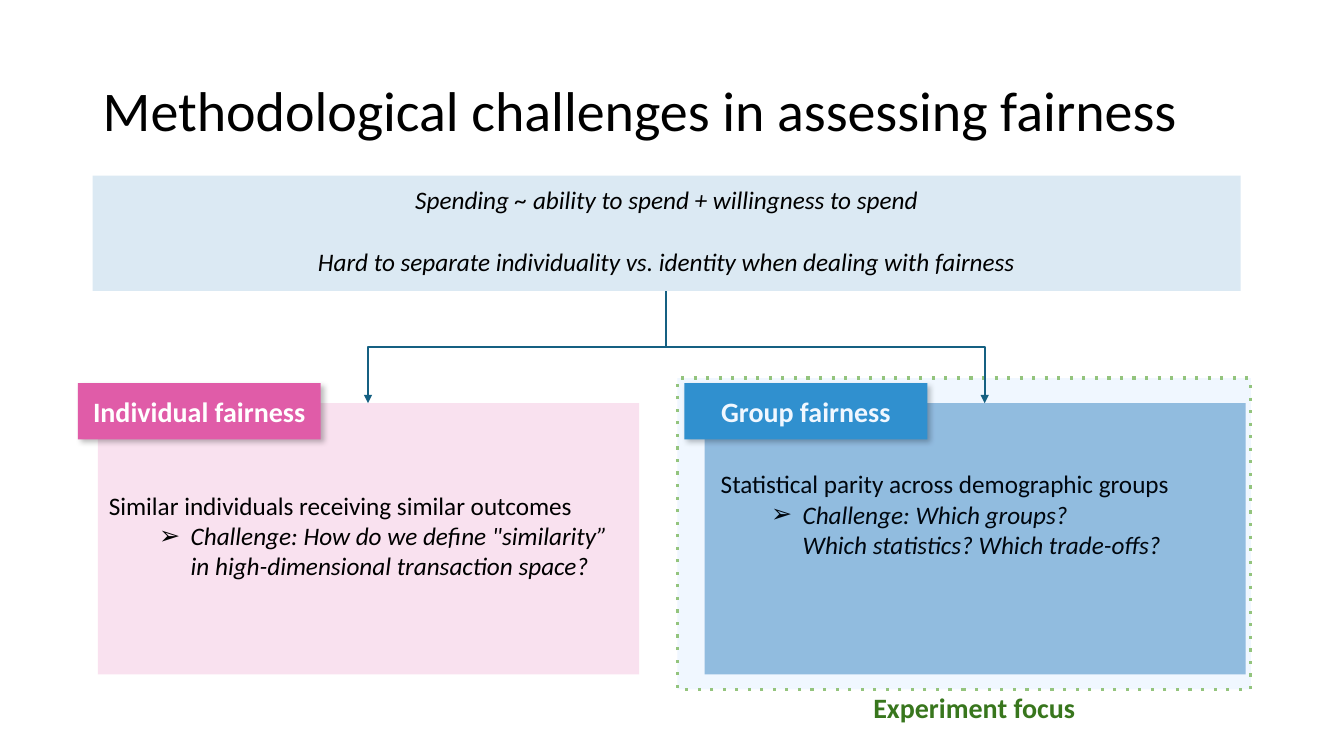
from lxml import etree
from pptx import Presentation
from pptx.dml.color import RGBColor
from pptx.enum.shapes import MSO_CONNECTOR, MSO_SHAPE
from pptx.enum.text import MSO_ANCHOR, MSO_AUTO_SIZE, PP_ALIGN
from pptx.oxml.ns import qn
from pptx.util import Pt

RECT, ELBOW = MSO_SHAPE.RECTANGLE, MSO_CONNECTOR.ELBOW
TOP, MIDDLE = MSO_ANCHOR.TOP, MSO_ANCHOR.MIDDLE
LEFT, CENTER = PP_ALIGN.LEFT, PP_ALIGN.CENTER
NO_FIT = MSO_AUTO_SIZE.NONE
TWO_CONTENT = 3

COLORS = {
    "black": "000000", "white": "FFFFFF", "banner": "DBE9F3",
    "pink": "E05CA8", "blue": "3392CC", "light_blue": "9BC0DE",
    "focus": "007DFF", "dots": "93C47D", "green": "38761D", "arrow": "156082",
}


def color(name):
    return RGBColor.from_string(COLORS[name])


def add_xml(parent, tag, **attrs):
    child = etree.SubElement(parent, qn(tag))
    for key, value in attrs.items():
        child.set(key, str(value))
    return child


class FairnessSlide:
    font = "Calibri"

    def __init__(self, prs):
        self.s = prs.slides.add_slide(prs.slide_layouts[TWO_CONTENT])
        self.shapes = self.s.shapes

    def place(self, sp, box):
        sp.left, sp.top, sp.width, sp.height = (Pt(v) for v in box)

    def frame(self, sp, anchor, inset_x=7.2, inset_y=3.6):
        tf = sp.text_frame
        tf.word_wrap = True
        tf.auto_size = NO_FIT
        tf.vertical_anchor = anchor
        tf.margin_left = tf.margin_right = Pt(inset_x)
        tf.margin_top = tf.margin_bottom = Pt(inset_y)
        return tf

    def add_lines(self, p, lines, size, ink="black", align=LEFT, before=0, bold=False, italic=False):
        """Add one run per line, with a line break between the runs."""
        p.alignment = align
        p.space_before = Pt(before)
        for i, line in enumerate(lines):
            if i:
                p.add_line_break()
                add_xml(p._p.findall(qn("a:br"))[-1], "a:rPr", sz=size * 100)
            r = p.add_run()
            r.text = line
            r.font.name, r.font.size = self.font, Pt(size)
            r.font.bold, r.font.italic = bold, italic
            r.font.color.rgb = color(ink)

    def title(self, text, box):
        sp = self.shapes.title
        self.place(sp, box)
        p = self.frame(sp, MIDDLE).paragraphs[0]
        p.line_spacing = 0.9
        self.add_lines(p, [text], 40)

    def rect(self, box, fill, alpha=None):
        sp = self.shapes.add_shape(RECT, *(Pt(v) for v in box))
        sp.shadow.inherit = False
        sp.fill.solid()
        sp.fill.fore_color.rgb = color(fill)
        sp.line.fill.background()
        if alpha:
            rgb = sp._element.spPr.find(qn("a:solidFill"))[0]
            add_xml(rgb, "a:alpha", val=alpha * 1000)
        return sp

    def banner(self, lines, box):
        tf = self.frame(self.rect(box, "banner"), TOP, inset_y=6.5)
        for i, line in enumerate(lines):
            p = tf.add_paragraph() if i else tf.paragraphs[0]
            self.add_lines(p, [line], 18, align=CENTER, before=22 * i, italic=True)

    def tag(self, text, box, fill):
        sp = self.rect(box, fill)
        effects = sp._element.spPr.find(qn("a:effectLst"))
        shadow = add_xml(effects, "a:outerShdw", blurRad=Pt(4), dist=Pt(3), dir=45 * 60000)
        rgb = add_xml(shadow, "a:srgbClr", val=COLORS["black"])
        add_xml(rgb, "a:alpha", val=25000)
        p = self.frame(sp, MIDDLE).paragraphs[0]
        self.add_lines(p, [text], 20, "white", CENTER, bold=True)

    def definition(self, idx, box, statement, challenge):
        """Fill a body placeholder with a statement and its bulleted challenge."""
        sp = self.s.placeholders[idx]
        self.place(sp, box)
        self.shapes._spTree.append(sp._element)
        tf = self.frame(sp, TOP, 11.5, 8.6)
        p = tf.paragraphs[0]
        pPr = p._p.get_or_add_pPr()
        pPr.set("marL", "0")
        pPr.set("indent", "0")
        add_xml(pPr, "a:buNone")
        self.add_lines(p, [statement], 18)
        p = tf.add_paragraph()
        p.level = 1
        pPr = p._p.get_or_add_pPr()
        pPr.set("marL", str(Pt(58.5)))
        pPr.set("indent", str(Pt(-22.5)))
        add_xml(add_xml(pPr, "a:buClr"), "a:srgbClr", val=COLORS["black"])
        add_xml(pPr, "a:buFont", typeface="Arial")
        add_xml(pPr, "a:buChar", char="➢")
        self.add_lines(p, challenge, 18, italic=True)

    def focus_frame(self, box):
        sp = self.rect(box, "focus", alpha=6)
        sp.line.color.rgb = color("dots")
        sp.line.width = Pt(2.25)
        add_xml(sp._element.spPr.find(qn("a:ln")), "a:prstDash", val="dot")

    def caption(self, text, box):
        sp = self.shapes.add_textbox(*(Pt(v) for v in box))
        p = self.frame(sp, TOP, 9.4, 9.4).paragraphs[0]
        self.add_lines(p, [text], 20, "green", CENTER, bold=True)

    def branch(self, x1, y1, x2, y2):
        """Elbow arrow that leaves and arrives vertically: a turned elbow connector."""
        mid_x, mid_y = (x1 + x2) / 2, (y1 + y2) / 2
        half_w, half_h = (y2 - y1) / 2, abs(x2 - x1) / 2
        to_right = x2 > x1
        side = 1 if to_right else -1
        cx = self.shapes.add_connector(
            ELBOW, Pt(mid_x + side * half_w), Pt(mid_y - half_h),
            Pt(mid_x - side * half_w), Pt(mid_y + half_h))
        spPr = cx._element.spPr
        spPr.find(qn("a:xfrm")).set("rot", str((270 if to_right else 90) * 60000))
        cx.line.color.rgb = color("arrow")
        cx.line.width = Pt(1.5)
        add_xml(spPr.find(qn("a:ln")), "a:tailEnd", type="triangle")
        add_xml(spPr, "a:effectLst")


def main():
    prs = Presentation()
    prs.slide_width, prs.slide_height = Pt(960), Pt(540)
    slide = FairnessSlide(prs)
    slide.title("Methodological challenges in assessing fairness", (66.2, 28.8, 846.7, 104.4))
    slide.banner(["Spending ~ ability to spend + willingness to spend",
                  "Hard to separate individuality vs. identity when dealing with fairness"],
                 (66.2, 125.5, 820, 82.3))
    panels = [
        (1, "Individual fairness", "pink", "pink", 18, 66.2, 341.4,
         "Similar individuals receiving similar outcomes",
         ["Challenge:\u00a0How do we define \"similarity”", "in high-dimensional transaction space?"]),
        (2, "Group fairness", "blue", "light_blue", None, 503.3, 326.2,
         "Statistical parity across demographic groups",
         ["Challenge:\u00a0Which groups?", "Which statistics? Which trade-offs?"]),
    ]
    for i, (idx, name, tag, fill, alpha, x, y, statement, challenge) in enumerate(panels):
        left = 70 + 433.3 * i
        slide.rect((left, 288, 386.6, 193.7), fill, alpha)
        slide.tag(name, (left - 14.4, 273.6, 173.5, 40.3), tag)
        slide.definition(idx, (x, y, 400.3, 100), statement, challenge)
    slide.focus_frame((483.8, 270, 409.7, 222.5))
    slide.caption("Experiment focus", (564.5, 483.8, 262.8, 43.9))
    for end_x in (262.8, 703.4):
        slide.branch(475.9, 208, end_x, 288)
    prs.save("out.pptx")


if __name__ == "__main__":
    main()
